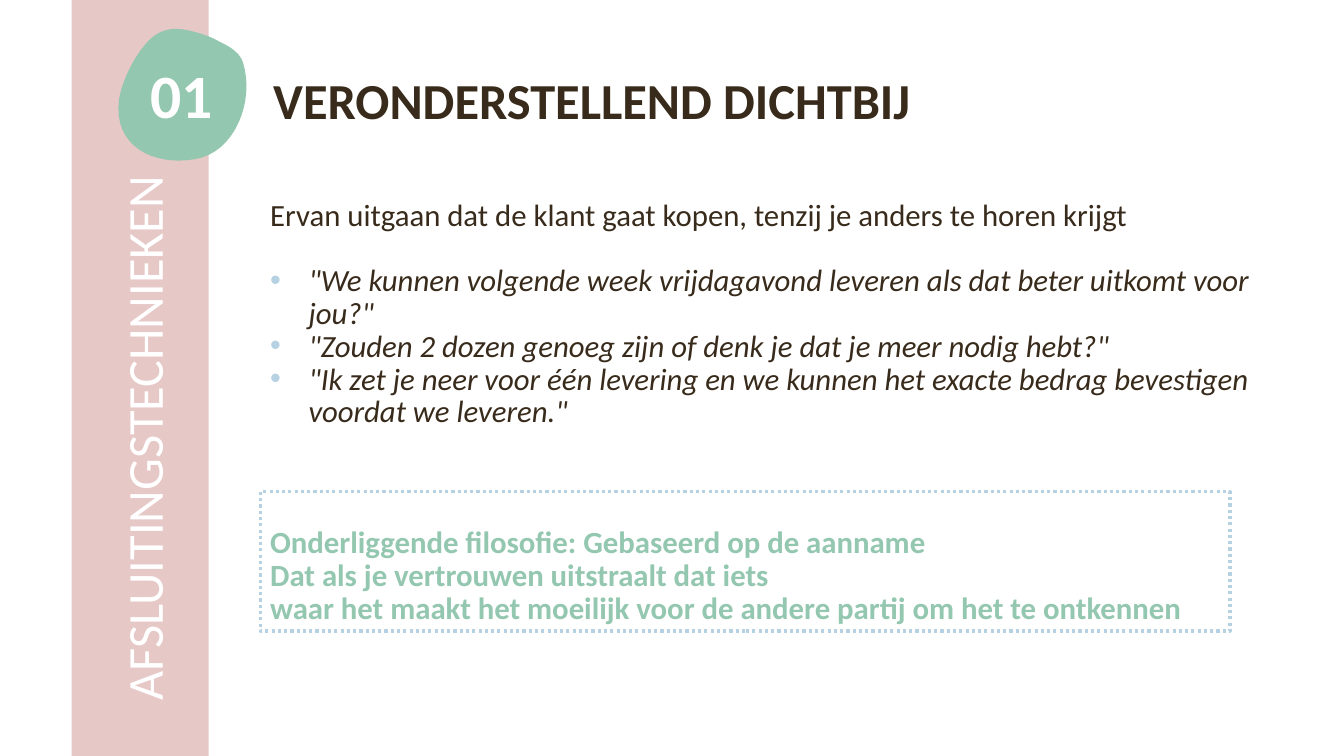
from lxml import etree
from pptx import Presentation
from pptx.dml.color import RGBColor
from pptx.enum.dml import MSO_LINE
from pptx.enum.shapes import MSO_SHAPE
from pptx.enum.text import MSO_ANCHOR, MSO_AUTO_SIZE, PP_ALIGN
from pptx.oxml.ns import qn
from pptx.util import Inches, Pt

RECTANGLE = MSO_SHAPE.RECTANGLE
DOTTED = MSO_LINE.ROUND_DOT
TOP, MIDDLE = MSO_ANCHOR.TOP, MSO_ANCHOR.MIDDLE
LEFT, CENTER = PP_ALIGN.LEFT, PP_ALIGN.CENTER

BROWN, GREEN, PINK, BLUE, WHITE = "382B1B", "94C7B0", "E6C8C7", "B6D1E1", "FFFFFF"
FONT = "Calibri"
LINE = 23.4
INDENT = 0.38

TITLE = "VERONDERSTELLEND DICHTBIJ"
SIDE_LABEL = "AFSLUITINGSTECHNIEKEN"
NUMBER = "01"
INTRO = ["Ervan uitgaan dat de klant gaat kopen, tenzij je anders te horen krijgt"]
EXAMPLES = [
    '"We kunnen volgende week vrijdagavond leveren als dat beter uitkomt voor jou?"',
    '"Zouden 2 dozen genoeg zijn of denk je dat je meer nodig hebt?"',
    '"Ik zet je neer voor één levering en we kunnen het exacte bedrag bevestigen voordat we leveren."',
]
PHILOSOPHY = [
    "Onderliggende filosofie: Gebaseerd op de aanname",
    "Dat als je vertrouwen uitstraalt dat iets",
    "waar het maakt het moeilijk voor de andere partij om het te ontkennen",
]
SECTIONS = [
    {"lines": INTRO, "gap": 0, "color": BROWN},
    {"lines": EXAMPLES, "gap": 1, "color": BROWN, "italic": True, "bullet": True},
    {"lines": PHILOSOPHY, "gap": 3, "color": GREEN, "bold": True},
]
BLOB_START = (1.94, 0.32)
BLOB_CURVES = [
    ((1.77, 0.27), (1.6, 0.26), (1.46, 0.42)),
    ((1.33, 0.56), (1.21, 0.8), (1.18, 0.99)),
    ((1.12, 1.45), (1.52, 1.65), (1.93, 1.58)),
    ((2.33, 1.52), (2.53, 1), (2.41, 0.62)),
    ((2.37, 0.51), (2.27, 0.46), (2.17, 0.41)),
    ((2.1, 0.37), (2.02, 0.34), (1.94, 0.32)),
]
CURVE_STEPS = 16


def rgb(color):
    return RGBColor.from_string(color)


def place(shape, left, top, width, height):
    shape.left, shape.top = Inches(left), Inches(top)
    shape.width, shape.height = Inches(width), Inches(height)


def prepare_frame(shape, anchor):
    frame = shape.text_frame
    frame.word_wrap = True
    frame.auto_size = MSO_AUTO_SIZE.NONE
    frame.vertical_anchor = anchor
    return frame


def set_bullet(paragraph, bullet):
    properties = paragraph._p.get_or_add_pPr()
    indent = Inches(INDENT) if bullet else 0
    properties.set("marL", str(indent))
    properties.set("indent", str(-indent))
    if bullet:
        bullet_color = etree.SubElement(properties, qn("a:buClr"))
        etree.SubElement(bullet_color, qn("a:srgbClr"), val=BLUE)
        etree.SubElement(properties, qn("a:buFont"), typeface="Arial")
        etree.SubElement(properties, qn("a:buChar"), char="•")
    else:
        etree.SubElement(properties, qn("a:buNone"))


def write(paragraph, text, size, color, spacing, bold=False, italic=False, align=LEFT):
    paragraph.alignment = align
    paragraph.line_spacing = spacing
    run = paragraph.add_run()
    run.text = text
    run.font.name = FONT
    run.font.size = Pt(size)
    run.font.bold = bold
    run.font.italic = italic
    run.font.color.rgb = rgb(color)


def add_title(slide):
    title = slide.shapes.title
    place(title, 2.61, 0.63, 8.7, 0.79)
    frame = prepare_frame(title, MIDDLE)
    write(frame.paragraphs[0], TITLE, 36, BROWN, 0.9, bold=True)


def add_body(slide):
    body = slide.placeholders[1]
    place(body, 2.58, 1.93, 10.03, 5.11)
    frame = prepare_frame(body, TOP)
    paragraph = frame.paragraphs[0]
    for section in SECTIONS:
        for index, text in enumerate(section["lines"]):
            if paragraph is None:
                paragraph = frame.add_paragraph()
            set_bullet(paragraph, section.get("bullet", False))
            paragraph.space_before = Pt(LINE * section["gap"] if index == 0 else 0)
            write(paragraph, text, 22, section["color"], Pt(LINE),
                  section.get("bold", False), section.get("italic", False))
            paragraph = None


def add_rectangle(slide, *box):
    shape = slide.shapes.add_shape(RECTANGLE, *map(Inches, box))
    shape.shadow.inherit = False
    return shape


def add_label(slide, box, text, size, spacing, **style):
    label = slide.shapes.add_textbox(*map(Inches, box))
    frame = prepare_frame(label, TOP)
    write(frame.paragraphs[0], text, size, WHITE, spacing, **style)
    return label


def blob_points():
    points = []
    start = BLOB_START
    for first, second, end in BLOB_CURVES:
        for step in range(1, CURVE_STEPS + 1):
            t = step / CURVE_STEPS
            u = 1 - t
            points.append(tuple(
                Inches(u**3 * a + 3 * u * u * t * b + 3 * u * t * t * c + t**3 * d)
                for a, b, c, d in zip(start, first, second, end)))
        start = end
    return points


def add_blob(slide):
    builder = slide.shapes.build_freeform(*map(Inches, BLOB_START))
    builder.add_line_segments(blob_points(), close=True)
    blob = builder.convert_to_shape()
    blob.shadow.inherit = False
    blob.fill.solid()
    blob.fill.fore_color.rgb = rgb(GREEN)
    blob.line.fill.background()


def main():
    presentation = Presentation()
    presentation.slide_width, presentation.slide_height = Inches(13.33), Inches(7.5)
    slide = presentation.slides.add_slide(presentation.slide_layouts[1])
    add_title(slide)
    add_body(slide)

    side_band = add_rectangle(slide, 0.71, 0, 1.36, 7.5)
    side_band.fill.solid()
    side_band.fill.fore_color.rgb = rgb(PINK)
    side_band.line.fill.background()

    side_label = add_label(slide, (-1.97, 2.77, 7.38, 1.17), SIDE_LABEL, 36, 0.9)
    side_label.rotation = 270

    philosophy_frame = add_rectangle(slide, 2.58, 4.88, 9.62, 1.38)
    philosophy_frame.fill.background()
    philosophy_frame.line.color.rgb = rgb(BLUE)
    philosophy_frame.line.width = Pt(2.25)
    philosophy_frame.line.dash_style = DOTTED

    add_blob(slide)
    add_label(slide, (1.17, 0.92, 1.26, 1.05), NUMBER, 44, Pt(LINE), bold=True, align=CENTER)
    presentation.save("out.pptx")


if __name__ == "__main__":
    main()
